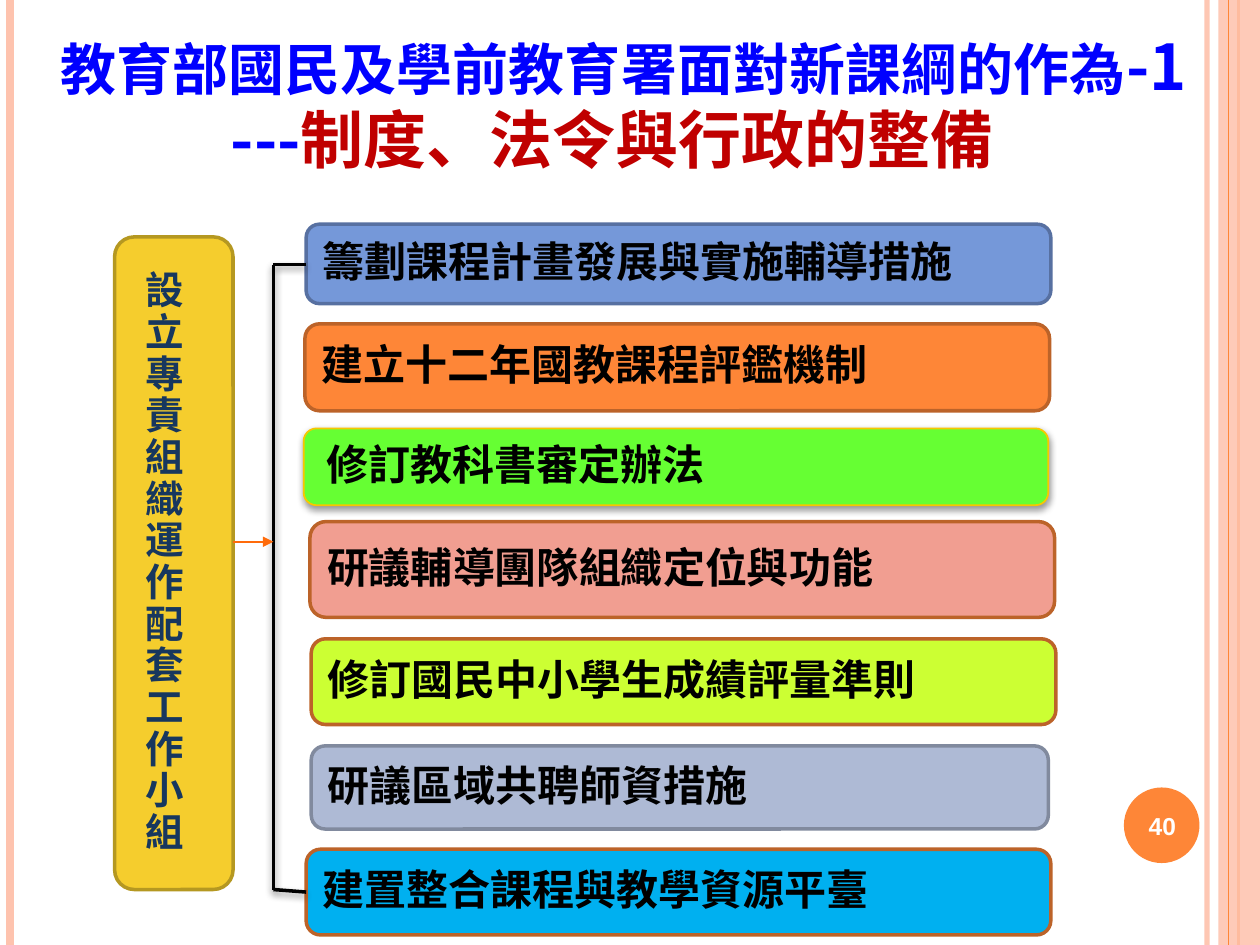
from lxml import etree
from pptx import Presentation
from pptx.dml.color import RGBColor
from pptx.enum.shapes import MSO_CONNECTOR, MSO_SHAPE
from pptx.enum.text import MSO_ANCHOR, PP_ALIGN
from pptx.oxml.ns import qn
from pptx.util import Inches, Pt

STRAIGHT = MSO_CONNECTOR.STRAIGHT
RECTANGLE, ELLIPSE = MSO_SHAPE.RECTANGLE, MSO_SHAPE.OVAL
ROUNDED = MSO_SHAPE.ROUNDED_RECTANGLE
TOP, MIDDLE, BOTTOM = MSO_ANCHOR.TOP, MSO_ANCHOR.MIDDLE, MSO_ANCHOR.BOTTOM
LEFT, CENTER = PP_ALIGN.LEFT, PP_ALIGN.CENTER

CJK_FONT = "Noto Sans CJK SC"
COLORS = {
    "black": "000000", "white": "FFFFFF", "blue": "0000FF", "red": "C00000",
    "navy": "17375E", "orange": "FE8637", "peach": "FEC3AE", "arrow": "FF6B0A",
    "rust": "BC6329", "yellow": "F5CD2D", "olive": "B59821",
    "steel": "7598D9", "steel edge": "5770A1", "green": "66FF33",
    "gold": "F8C700", "salmon": "F19E91", "lime": "CCFF33",
    "grey": "AEBAD5", "grey edge": "818A9E", "cyan": "00B0F0",
}

# text, left, top, width, height, fill, edge
MEASURES = [
    ("籌劃課程計畫發展與實施輔導措施", 2.43, 1.78, 5.91, 0.63, "steel", "steel edge"),
    ("建立十二年國教課程評鑑機制", 2.42, 2.57, 5.91, 0.69, "orange", "rust"),
    ("修訂教科書審定辦法", 2.41, 3.4, 5.91, 0.61, "green", "gold"),
    ("研議輔導團隊組織定位與功能", 2.46, 4.14, 5.91, 0.76, "salmon", "rust"),
    ("修訂國民中小學生成績評量準則", 2.47, 5.07, 5.91, 0.68, "lime", "rust"),
    ("研議區域共聘師資措施", 2.47, 5.92, 5.85, 0.66, "grey", "grey edge"),
    ("建置整合課程與教學資源平臺", 2.43, 6.74, 5.91, 0.68, "cyan", "rust"),
]


def rgb(name):
    return RGBColor.from_string(COLORS[name])


def set_alpha(color_parent, percent):
    color = next(color_parent.iter(qn("a:srgbClr")))
    etree.SubElement(color, qn("a:alpha"), val=str(percent * 1000))


def set_effects(shape, shadow=False):
    """Replace the theme effects with none, or with a soft drop shadow."""
    properties = shape._element.spPr
    for old in properties.findall(qn("a:effectLst")):
        properties.remove(old)
    effects = etree.SubElement(properties, qn("a:effectLst"))
    if shadow:
        outer = etree.SubElement(
            effects, qn("a:outerShdw"), blurRad=str(Pt(4)), dist=str(Pt(2)),
            dir="5400000", rotWithShape="0")
        color = etree.SubElement(outer, qn("a:srgbClr"), val=COLORS["black"])
        etree.SubElement(color, qn("a:alpha"), val="40000")


def add_line(slide, start, end, color, width, shadow=False, alpha=None, arrow=False):
    points = [Inches(value) for value in (*start, *end)]
    line = slide.shapes.add_connector(STRAIGHT, *points)
    line.line.color.rgb = rgb(color)
    line.line.width = Pt(width)
    outline = line.line._get_or_add_ln()
    if alpha:
        set_alpha(outline, alpha)
    if arrow:
        etree.SubElement(outline, qn("a:tailEnd"), type="triangle")
    set_effects(line, shadow)
    return line


def add_box(slide, kind, box, fill, edge=None, width=2, shadow=False, alpha=None):
    shape = slide.shapes.add_shape(kind, *map(Inches, box))
    shape.fill.solid()
    shape.fill.fore_color.rgb = rgb(fill)
    if alpha:
        set_alpha(shape._element.spPr, alpha)
    if edge:
        shape.line.color.rgb = rgb(edge)
        shape.line.width = Pt(width)
    else:
        shape.line.fill.background()
    set_effects(shape, shadow)
    return shape


def add_run(paragraph, text, size, color, font=CJK_FONT):
    run = paragraph.add_run()
    run.text = text
    run.font.size = Pt(size)
    run.font.bold = True
    run.font.name = font
    run.font.color.rgb = rgb(color)
    east_asian = etree.SubElement(run._r.get_or_add_rPr(), qn("a:ea"))
    east_asian.set("typeface", font)


def write(shape, *lines, font=CJK_FONT, align=LEFT, anchor=MIDDLE, spacing=None,
          left_inset=0.1, bottom_inset=0.05):
    """Fill a shape with lines, each a list of (text, size, color) runs."""
    frame = shape.text_frame
    frame.word_wrap = True
    frame.vertical_anchor = anchor
    frame.margin_left = Inches(left_inset)
    frame.margin_bottom = Inches(bottom_inset)
    for index, runs in enumerate(lines):
        paragraph = frame.add_paragraph() if index else frame.paragraphs[0]
        paragraph.alignment = align
        if spacing:
            paragraph.line_spacing = spacing
        for text, size, color in runs:
            add_run(paragraph, text, size, color, font)
    return frame


def add_text(slide, box, *lines, **text_format):
    return write(slide.shapes.add_textbox(*map(Inches, box)), *lines, **text_format)


def add_side_bands(slide):
    for x, color, width, alpha in [(9.58, "peach", 3, 93), (0.08, "peach", 4.5, None),
                                   (9.83, "orange", 1.5, None)]:
        add_line(slide, (x, 0), (x, 7.5), color, width, alpha=alpha)
    add_box(slide, RECTANGLE, (9.67, 0, 0.33, 7.5), "peach", alpha=87)
    add_line(slide, (9.75, 0), (9.75, 7.5), "orange", 0.75)


def add_title(slide):
    frame = add_text(
        slide, (0, -0.21, 9.72, 2.22),
        [("教育部國民及學前教育署面對新課綱的作為", 32, "blue"), ("-1", 36, "blue")],
        [("---", 36, "blue"), ("制度、法令與行政的整備", 36, "red")],
        align=CENTER, anchor=BOTTOM, spacing=Pt(42), bottom_inset=0.61)
    frame.paragraphs[0]._p.get_or_add_pPr().set("marL", str(Inches(0.18)))


def add_page_number(slide):
    add_box(slide, ELLIPSE, (8.92, 6.25, 0.6, 0.6), "orange")
    add_text(slide, (8.89, 6.27, 0.67, 0.57), [("40", 14, "white")],
             font="Arial", align=CENTER)


def add_task_force(slide):
    add_box(slide, ROUNDED, (0.91, 1.88, 0.94, 5.18), "yellow", "olive")
    add_text(slide, (1.06, 2.1, 0.47, 4.77),
             [("設立專責組織運作配套工作小組", 22, "navy")],
             anchor=TOP, spacing=Pt(23.8))


def add_measures(slide):
    for text, *box, fill, edge in MEASURES:
        raised = fill == "green"
        bar = add_box(slide, ROUNDED, box, fill, edge,
                      width=1 if raised else 2, shadow=raised)
        write(bar, [(text, 24, "black")], spacing=0.9,
              left_inset=0.15 if raised else 0.1)


def add_bracket(slide):
    corners = [(2.43, 2.1), (2.17, 2.1), (2.17, 7.06), (2.43, 7.08)]
    for start, end in zip(corners, corners[1:]):
        add_line(slide, start, end, "black", 2, shadow=True)
    add_line(slide, (1.85, 4.3), (2.17, 4.3), "arrow", 1, arrow=True)


def main():
    presentation = Presentation()
    presentation.slide_width = Inches(10)
    presentation.slide_height = Inches(7.5)
    slide = presentation.slides.add_slide(presentation.slide_layouts[6])
    add_side_bands(slide)
    add_title(slide)
    add_page_number(slide)
    add_task_force(slide)
    add_measures(slide)
    add_bracket(slide)
    presentation.save("out.pptx")


if __name__ == "__main__":
    main()
